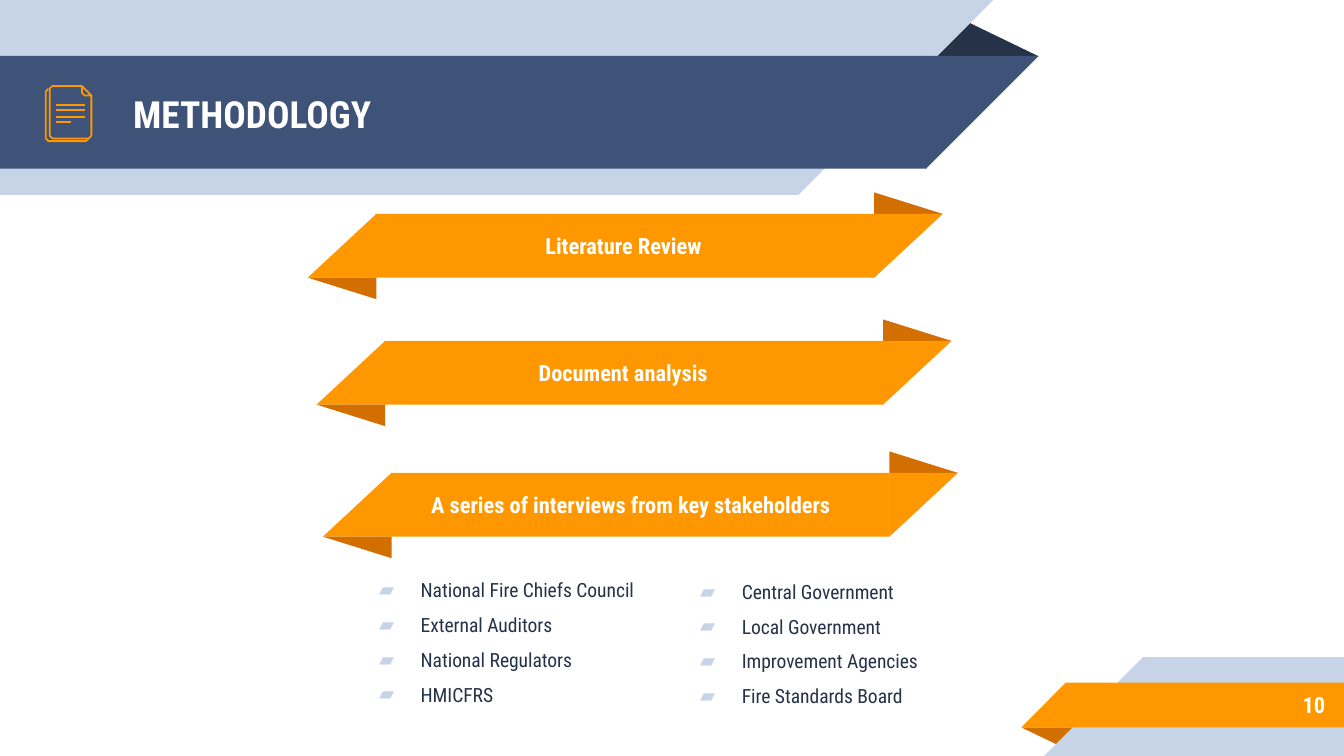
from lxml import etree
from pptx import Presentation
from pptx.dml.color import RGBColor
from pptx.enum.shapes import MSO_CONNECTOR, MSO_SHAPE
from pptx.enum.text import MSO_ANCHOR, MSO_AUTO_SIZE, PP_ALIGN
from pptx.oxml.ns import qn
from pptx.util import Inches, Pt

RECT, WEDGE = MSO_SHAPE.RECTANGLE, MSO_SHAPE.RIGHT_TRIANGLE
PEAK, LINE = MSO_SHAPE.ISOSCELES_TRIANGLE, MSO_CONNECTOR.STRAIGHT
LEFT, RIGHT = PP_ALIGN.LEFT, PP_ALIGN.RIGHT
TOP, MID = MSO_ANCHOR.TOP, MSO_ANCHOR.MIDDLE
FIXED, GROW = MSO_AUTO_SIZE.NONE, MSO_AUTO_SIZE.SHAPE_TO_FIT_TEXT
CELL = Inches(0.01)
COLS = 1000
ROWS = COLS * 9 / 16
LAP = 0.4
FACE = "Roboto Condensed"
INK, NAVY, PALE = "263248", "3F5378", "C7D3E6"
GOLD, RUST, WHITE = "FF9800", "D26F00", "FFFFFF"
BOLD = {"name": FACE, "size": Pt(12), "bold": True}
HEAD = {**BOLD, "size": Pt(20)}
PLAIN = {"name": FACE, "size": Pt(10.5), "bold": False}
PAD = {"margin_" + side: Inches(0.1) for side in ("left", "right", "top", "bottom")}
FRAME = {**PAD, "word_wrap": True, "auto_size": FIXED, "vertical_anchor": MID}
LIST = {**FRAME, "vertical_anchor": TOP}
SNUG = {**LIST, "word_wrap": False, "auto_size": GROW,
        "margin_top": Inches(0.05), "margin_bottom": Inches(0.05)}


def tint(part, code):
    part.rgb = RGBColor.from_string(code)


def apply(part, values):
    for key, value in values.items():
        setattr(part, key, value)


def span(box):
    return [round(CELL * n) for n in box]


def put(slide, kind, box, hue, turn=0, flip=None, peak=None):
    shape = slide.shapes.add_shape(kind, *span(box))
    shape.shadow.inherit = False
    shape.fill.solid()
    tint(shape.fill.fore_color, hue)
    shape.line.fill.background()
    shape.rotation = turn
    if flip:
        shape._element.spPr.xfrm.set(flip, "1")
    if peak is not None:
        shape.adjustments[0] = peak


def band(slide, box, hue, left=0, right=0):
    x, y, w, h = box
    start = x + left - (LAP if left else 0)
    end = x + w - right + (LAP if right else 0)
    put(slide, RECT, (start, y, end - start, h), hue)
    if right:
        put(slide, WEDGE, (x + w - right, y, right, h), hue, 180, "flipH")
    if left:
        put(slide, WEDGE, (x, y, left, h), hue, 0, "flipH")


def write(slide, box, words, font, hue, frame, align=LEFT, holder=None):
    part = holder or slide.shapes.add_textbox(*span(box))
    apply(part, dict(zip(("left", "top", "width", "height"), span(box))))
    slide.shapes._spTree.append(part._element)
    text = part.text_frame
    text.text = words
    apply(text, frame)
    for para in text.paragraphs:
        apply(para, {"alignment": align, "space_before": Pt(0), "line_spacing": 1.0})
        for run in para.runs:
            apply(run.font, font)
            tint(run.font.color, hue)
    return text


def bullets(slide, box, holder, items):
    text = write(slide, box, "\n".join(items), PLAIN, INK, LIST, holder=holder)
    for para in text.paragraphs:
        para.space_before = Pt(6)
        props = para._p.get_or_add_pPr()
        props.set("marL", str(Inches(0.31)))
        props.set("indent", str(-Inches(0.31)))
        color = etree.SubElement(props, qn("a:buClr"))
        etree.SubElement(color, qn("a:srgbClr"), val=PALE)
        etree.SubElement(props, qn("a:buFont"), typeface=FACE)
        etree.SubElement(props, qn("a:buChar"), char="▰")


def stroke(part):
    tint(part.line.color, GOLD)
    part.line.width = Pt(0.96)


def trace(slide, box, dots, close=False):
    x, y = box[:2]
    dots = [(x + a, y + b) for a, b in dots]
    path = slide.shapes.build_freeform(*dots[0], scale=CELL)
    path.add_line_segments(dots[1:], close=close)
    shape = path.convert_to_shape()
    shape.shadow.inherit = False
    shape.fill.background()
    stroke(shape)


def icon(slide, box):
    x, y, w, h = box
    trace(slide, box, [(w - 2, h - 2), (w - 4, h), (2, h), (0, h - 2),
                       (0, 4), (2, 2)])
    trace(slide, box, [(w, 7), (w, h - 4), (w - 2, h - 2), (5, h - 2),
                       (3, h - 4), (3, 2), (5, 0), (w - 7, 0)])
    trace(slide, box, [(w - 7, 0), (w, 7), (w - 5, 7), (w - 7, 5)], True)
    for row, size in ((14, 21), (18, 21), (23, 21), (27, 11)):
        ends = span((x + 8, y + row, x + 8 + size, y + row))
        rule = slide.shapes.add_connector(LINE, *ends)
        etree.SubElement(rule._element.spPr, qn("a:effectLst"))
        stroke(rule)


def header(slide, box, words):
    x, y, w, h = box
    put(slide, PEAK, (x + w - 85, y + 14, 85, 28), INK, peak=0.32)
    band(slide, (x, y, w - 34, h), PALE, right=h)
    band(slide, (x, y + 41.6, w, 84), NAVY, right=84)
    write(slide, (x + 89, y + 42.5, 575, 84), words, HEAD, WHITE, FRAME,
          holder=slide.shapes.title)
    icon(slide, (x + 34, y + 64, 34, 41))


def footer(slide, box, words):
    x, y, w, h = box
    put(slide, PEAK, (x, y + 52.3, 43, 14), RUST, 180, peak=0.32)
    band(slide, (x + 17, y, w - 17, h), PALE, left=h)
    band(slide, (x, y + 19, w, 33.3), GOLD, left=33)
    write(slide, (x + 73, y + 18, 163, 35), words, BOLD, WHITE, FRAME, RIGHT)


def ribbon(slide, box, words, inset, size):
    x, y, w, h = box
    tip, fold = 51, 16
    put(slide, PEAK, (x + w - tip, y - fold, tip, fold), RUST, peak=0)
    band(slide, box, GOLD, tip, tip)
    put(slide, PEAK, (x, y + h, tip, fold), RUST, 180, peak=0)
    write(slide, (x + inset, y + 8.4, size, 30), words, BOLD, WHITE, SNUG)


def build():
    deck = Presentation()
    width, height = span((COLS, ROWS))
    apply(deck, {"slide_width": width, "slide_height": height})
    slide = deck.slides.add_slide(deck.slide_layouts[3])
    first, second = list(slide.placeholders)[1:]
    header(slide, (0, 0, 773, 145), "METHODOLOGY")
    footer(slide, (760, 489, COLS - 760, ROWS - 489), "10")
    for x, y, words, inset, size in (
        (229, 159.2, "Literature Review", 167, 138),
        (235.6, 253.7, "Document analysis", 155.4, 147),
        (240.3, 351.9, "A series of interviews from key stakeholders", 70.7, 321),
    ):
        ribbon(slide, (x, y, 472.4, 47.4), words, inset, size)
    bullets(slide, (272, 420.3, 352, 77), first,
            ["National Fire Chiefs Council", "External Auditors",
             "National Regulators", "HMICFRS"])
    bullets(slide, (511, 421.5, 352, 77), second,
            ["Central Government", "Local Government",
             "Improvement Agencies", "Fire Standards Board"])
    deck.save("out.pptx")


if __name__ == "__main__":
    build()
